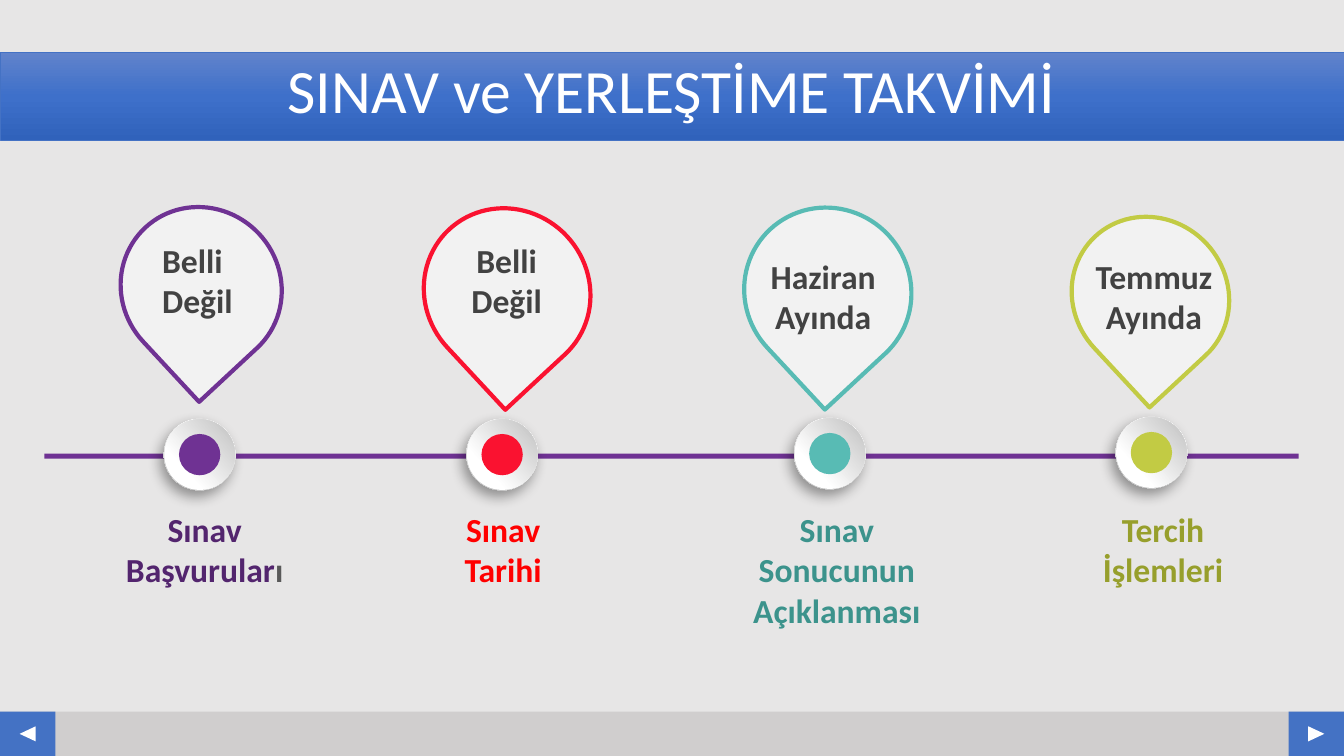
from dataclasses import dataclass

from lxml import etree
from pptx import Presentation
from pptx.dml.color import RGBColor
from pptx.enum.shapes import MSO_SHAPE
from pptx.enum.text import MSO_ANCHOR, PP_ALIGN
from pptx.oxml.ns import qn
from pptx.util import Inches, Pt

RECTANGLE, OVAL = MSO_SHAPE.RECTANGLE, MSO_SHAPE.OVAL
TEARDROP, TRIANGLE = MSO_SHAPE.TEAR, MSO_SHAPE.ISOSCELES_TRIANGLE
LEFT, CENTER = PP_ALIGN.LEFT, PP_ALIGN.CENTER
MIDDLE = MSO_ANCHOR.MIDDLE

FONT = "Calibri"
SLIDE_WIDTH, SLIDE_HEIGHT = 13.33, 7.5
FOOTER_HEIGHT, BUTTON_WIDTH = 0.44, 0.55
ARROW_WIDTH, ARROW_HEIGHT = 0.15, 0.16
RING_SIZE, RING_FACE_SIZE, DOT_SIZE = 0.71, 0.7, 0.41

WHITE = RGBColor(0xFF, 0xFF, 0xFF)
BACKGROUND = RGBColor(0xE7, 0xE6, 0xE6)
FOOTER_GRAY = RGBColor(0xD0, 0xCE, 0xCE)
BLUE = RGBColor(0x44, 0x72, 0xC4)
TITLE_TOP = RGBColor(0x61, 0x83, 0xCB)
TITLE_MIDDLE = RGBColor(0x3E, 0x70, 0xCA)
TITLE_BOTTOM = RGBColor(0x30, 0x62, 0xBB)
RING_SHADE = RGBColor(0xB8, 0xB8, 0xB8)
RING_FACE_SHADE = RGBColor(0xBF, 0xBF, 0xBF)
PIN_FILL = RGBColor(0xF2, 0xF2, 0xF2)
PIN_TEXT = RGBColor(0x42, 0x42, 0x42)
LABEL_GRAY = RGBColor(0x59, 0x59, 0x59)
PURPLE = RGBColor(0x6F, 0x32, 0x93)
DARK_PURPLE = RGBColor(0x53, 0x25, 0x6E)
CRIMSON = RGBColor(0xFA, 0x12, 0x30)
RED = RGBColor(0xFF, 0x00, 0x00)
TEAL = RGBColor(0x58, 0xBB, 0xB4)
DARK_TEAL = RGBColor(0x3C, 0x93, 0x8C)
LIME = RGBColor(0xC2, 0xCB, 0x44)
DARK_LIME = RGBColor(0x97, 0x9F, 0x2C)


@dataclass
class Milestone:
    """One timeline stop; places are (left, top, width, height) in inches."""
    color: RGBColor
    ring_center: tuple
    pin_place: tuple
    date_place: tuple
    date_lines: tuple
    label_place: tuple
    label_runs: tuple
    date_align: PP_ALIGN = CENTER


MILESTONES = (
    Milestone(PURPLE, (1.98, 4.51), (1.21, 2.04, 1.57, 1.63),
              (1.51, 2.33, 0.91, 0.91), ("Belli", "Değil"),
              (1.08, 5, 1.9, 0.91),
              (("Sınav Başvurular", DARK_PURPLE), ("ı", LABEL_GRAY)), LEFT),
    Milestone(CRIMSON, (4.98, 4.51), (4.22, 2.05, 1.62, 1.69),
              (4.57, 2.33, 0.91, 0.91), ("Belli", "Değil"),
              (4.15, 5, 1.68, 0.91), (("Sınav Tarihi", RED),)),
    Milestone(TEAL, (8.23, 4.5), (7.39, 2.05, 1.64, 1.68),
              (7.46, 2.49, 1.41, 1.31), ("Haziran", "Ayında"),
              (7.22, 5, 2.16, 1.31),
              (("Sınav Sonucunun Açıklanması", DARK_TEAL),)),
    Milestone(LIME, (11.42, 4.49), (10.65, 2.13, 1.52, 1.61),
              (10.76, 2.49, 1.37, 0.91), ("Temmuz", "Ayında"),
              (10.76, 5, 1.55, 0.91), (("Tercih İşlemleri", DARK_LIME),)),
)


def add_box(slide, kind, place, color=None, line=None, rotation=0):
    """Add a preset shape without shadow; color and line are optional."""
    box = slide.shapes.add_shape(kind, *(Inches(value) for value in place))
    box.shadow.inherit = False
    box.rotation = rotation
    if color is not None:
        box.fill.solid()
        box.fill.fore_color.rgb = color
    if line is None:
        box.line.fill.background()
    else:
        box.line.color.rgb = line
        box.line.width = Pt(3)
    return box


def set_gradient(shape, stops, angle):
    """Fill with (percent, color) stops; angle runs counterclockwise."""
    shape.fill.gradient()
    shape.fill.gradient_angle = angle
    stop_list = shape.element.spPr.find(".//" + qn("a:gsLst"))
    stop_list.clear()
    for percent, color in stops:
        stop = etree.SubElement(stop_list, qn("a:gs"), pos=str(percent * 1000))
        etree.SubElement(stop, qn("a:srgbClr"), val=str(color))


def add_soft_shadow(shape):
    effects = shape.element.spPr.find(qn("a:effectLst"))
    shadow = etree.SubElement(
        effects, qn("a:outerShdw"), blurRad=str(Pt(10)), dist=str(Pt(5)),
        dir=str(123 * 60000), algn="ctr", rotWithShape="0")
    color = etree.SubElement(shadow, qn("a:srgbClr"), val="000000")
    etree.SubElement(color, qn("a:alpha"), val="39000")


def write(para, text, size=24, color=PIN_TEXT, bold=True, align=CENTER):
    """Append one formatted run to a paragraph."""
    para.alignment = align
    span = para.add_run()
    span.text = text
    span.font.name = FONT
    span.font.size = Pt(size)
    span.font.bold = bold
    span.font.color.rgb = color


def add_text_frame(slide, place, wrap):
    box = slide.shapes.add_textbox(*(Inches(value) for value in place))
    box.text_frame.word_wrap = wrap
    return box.text_frame


def centered(center, size):
    """Return the place of a square around a center."""
    return center[0] - size / 2, center[1] - size / 2, size, size


def add_title(slide):
    title = slide.shapes.title
    title.left, title.top = Inches(0), Inches(0.52)
    title.width, title.height = Inches(SLIDE_WIDTH), Inches(0.87)
    set_gradient(title, ((0, TITLE_TOP), (50, TITLE_MIDDLE),
                         (100, TITLE_BOTTOM)), 270)
    title.line.color.rgb = BLUE
    title.line.width = Pt(0.5)
    frame = title.text_frame
    frame.vertical_anchor = MIDDLE
    frame.margin_bottom = Inches(0.1)
    para = frame.paragraphs[0]
    para.line_spacing = 0.9
    write(para, "SINAV ve YERLEŞTİME TAKVİMİ", size=44, color=WHITE, bold=False)


def add_footer(slide):
    top = SLIDE_HEIGHT - FOOTER_HEIGHT
    add_box(slide, RECTANGLE, (0, top, SLIDE_WIDTH, FOOTER_HEIGHT), FOOTER_GRAY)
    for left, rotation in ((0, 270), (SLIDE_WIDTH - BUTTON_WIDTH, 90)):
        add_box(slide, RECTANGLE, (left, top, BUTTON_WIDTH, FOOTER_HEIGHT), BLUE)
        arrow_place = (left + (BUTTON_WIDTH - ARROW_WIDTH) / 2,
                       top + (FOOTER_HEIGHT - ARROW_HEIGHT) / 2,
                       ARROW_WIDTH, ARROW_HEIGHT)
        add_box(slide, TRIANGLE, arrow_place, WHITE, rotation=rotation)


def add_ring(slide, center, color):
    ring = add_box(slide, OVAL, centered(center, RING_SIZE), rotation=62.3)
    set_gradient(ring, ((17, WHITE), (88, RING_SHADE)), 315)
    add_soft_shadow(ring)
    face = add_box(slide, OVAL, centered(center, RING_FACE_SIZE), rotation=273)
    set_gradient(face, ((29, WHITE), (98, RING_FACE_SHADE)), 315)
    add_box(slide, OVAL, centered(center, DOT_SIZE), color)


def add_milestone(slide, milestone):
    add_ring(slide, milestone.ring_center, milestone.color)
    add_box(slide, TEARDROP, milestone.pin_place, PIN_FILL,
            line=milestone.color, rotation=137.1)
    frame = add_text_frame(slide, milestone.date_place, wrap=False)
    for index, text in enumerate(milestone.date_lines):
        para = frame.add_paragraph() if index else frame.paragraphs[0]
        write(para, text, align=milestone.date_align)
    frame = add_text_frame(slide, milestone.label_place, wrap=True)
    for text, color in milestone.label_runs:
        write(frame.paragraphs[0], text, color=color)


def main():
    deck = Presentation()
    deck.slide_width, deck.slide_height = Inches(SLIDE_WIDTH), Inches(SLIDE_HEIGHT)
    slide = deck.slides.add_slide(deck.slide_layouts[5])
    slide.background.fill.solid()
    slide.background.fill.fore_color.rgb = BACKGROUND
    add_footer(slide)
    add_title(slide)
    add_box(slide, RECTANGLE, (0.44, 4.5, 12.44, 0.05), PURPLE)
    for milestone in MILESTONES:
        add_milestone(slide, milestone)
    deck.save("out.pptx")


if __name__ == "__main__":
    main()
